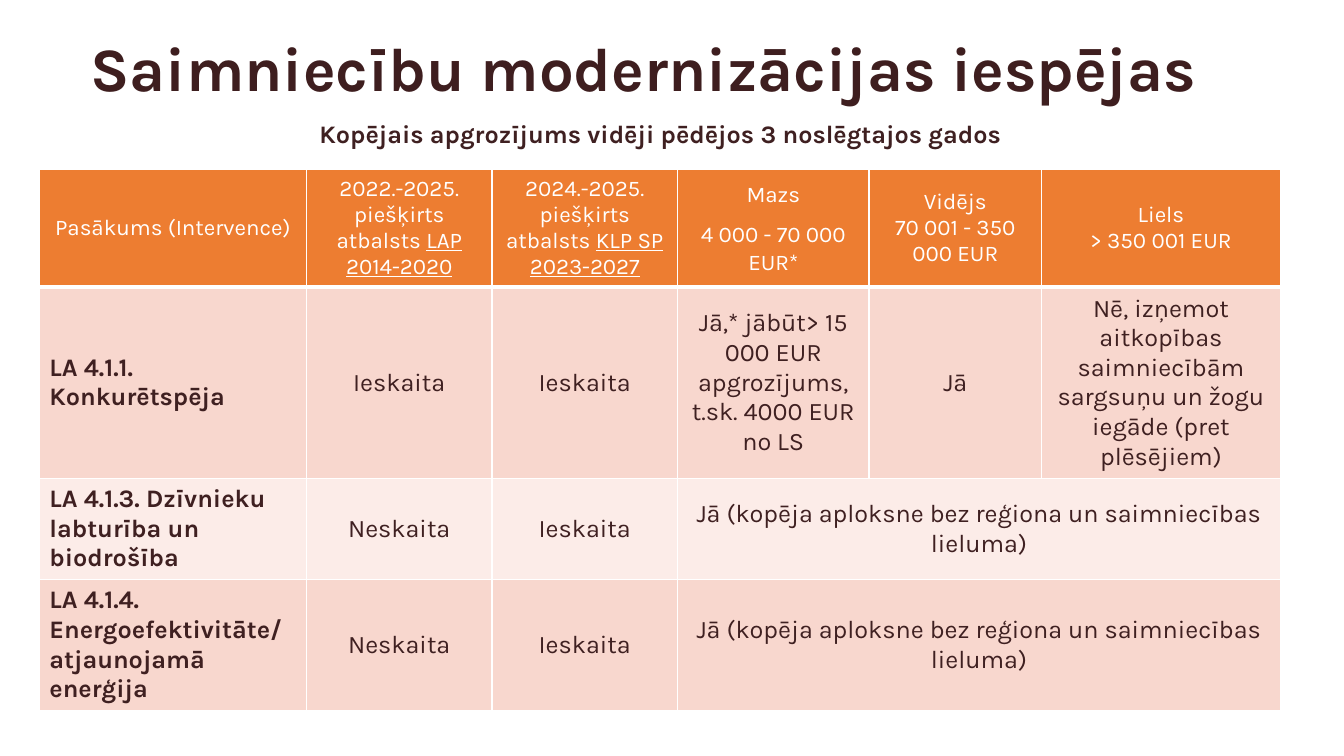
from lxml.etree import SubElement
from pptx import Presentation
from pptx.dml.color import RGBColor
from pptx.enum.text import MSO_ANCHOR, PP_ALIGN
from pptx.oxml.ns import qn
from pptx.util import Inches, Pt

FONT = "Karla"
TITLE_COLOR, TEXT_COLOR, WHITE = "3E1E1F", "3F2021", "FFFFFF"
HEADER_FILL, BAND_DARK, BAND_LIGHT = "ED7D31", "F8D7CE", "FCECE8"

COL_WIDTHS = [2.65, 1.84, 1.84, 1.9, 1.71, 2.37]
ROW_HEIGHTS = [1.14, 1.86, 0.98, 1.27]

# Each header cell is a list of paragraphs, each paragraph a list of runs;
# every second run is underlined
HEADERS = [
    [["Pasākums (Intervence)"]],
    [["2022.-2025. piešķirts atbalsts ", "LAP 2014-2020"]],
    [["2024.-2025. piešķirts atbalsts ", "KLP SP 2023-2027"]],
    [["Mazs"], ["4 000 - 70 000 EUR*"]],
    [["Vidējs"], ["70 001 - 350 000 EUR"]],
    [["Liels"], ["> 350 001 EUR"]],
]
SMALL_FARM_COL = 3
ANY_SIZE = "Jā (kopēja aploksne bez reģiona un saimniecības lieluma)"
BODY = [
    ["LA 4.1.1. Konkurētspēja", "Ieskaita", "Ieskaita",
     "Jā,* jābūt> 15 000 EUR apgrozījums, t.sk. 4000 EUR no LS", "Jā",
     "Nē, izņemot aitkopības saimniecībām sargsuņu un žogu iegāde "
     "(pret plēsējiem)"],
    ["LA 4.1.3. Dzīvnieku labturība un biodrošība", "Neskaita", "Ieskaita",
     ANY_SIZE],
    ["LA 4.1.4. Energoefektivitāte/ atjaunojamā enerģija", "Neskaita",
     "Ieskaita", ANY_SIZE],
]


def rgb(color):
    return RGBColor.from_string(color)


def write(tf, paragraphs, size=18, color=TEXT_COLOR, bold=False,
          align=PP_ALIGN.CENTER, line=None, after=None):
    tf.word_wrap = True
    for i, runs in enumerate(paragraphs):
        p = tf.paragraphs[0] if i == 0 else tf.add_paragraph()
        p.alignment = align
        if line:
            p.line_spacing = line
        if after:
            p.space_after = Pt(after)
        for j, text in enumerate(runs):
            r = p.add_run()
            r.text = text
            r.font.name = FONT
            r.font.size = Pt(size)
            r.font.bold = bold
            r.font.color.rgb = rgb(color)
            if j % 2:
                r.font.underline = True


def add_text(slide, text, left, top, width, height, anchor=MSO_ANCHOR.TOP,
             **fmt):
    box = slide.shapes.add_textbox(Inches(left), Inches(top),
                                   Inches(width), Inches(height))
    box.text_frame.vertical_anchor = anchor
    write(box.text_frame, [[text]], **fmt)


def style_cell(cell, fill, bottom=1):
    tc_pr = cell._tc.get_or_add_tcPr()
    for side, width in (("L", 1), ("R", 1), ("T", 1), ("B", bottom)):
        ln = SubElement(tc_pr, qn(f"a:ln{side}"), w=str(Pt(width)))
        SubElement(SubElement(ln, qn("a:solidFill")), qn("a:srgbClr"),
                   val=WHITE)
    cell.fill.solid()
    cell.fill.fore_color.rgb = rgb(fill)
    cell.vertical_anchor = MSO_ANCHOR.MIDDLE


def add_support_table(slide):
    table = slide.shapes.add_table(
        len(ROW_HEIGHTS), len(COL_WIDTHS), Inches(0.39), Inches(1.68),
        Inches(sum(COL_WIDTHS)), Inches(sum(ROW_HEIGHTS))).table
    for col, width in zip(table.columns, COL_WIDTHS):
        col.width = Inches(width)
    for row, height in zip(table.rows, ROW_HEIGHTS):
        row.height = Inches(height)

    # Header row
    for c, paragraphs in enumerate(HEADERS):
        cell = table.cell(0, c)
        style_cell(cell, HEADER_FILL, bottom=3)
        spacing = {}
        if c == SMALL_FARM_COL:
            cell.margin_left = cell.margin_right = Inches(0.07)
            cell.margin_top = cell.margin_bottom = 0
            spacing = {"line": 1.07, "after": 8}
        write(cell.text_frame, paragraphs, size=16, color=WHITE, **spacing)

    # Banded body rows; a short row spans its last text to the right edge
    last = len(COL_WIDTHS) - 1
    for n, texts in enumerate(BODY, start=1):
        for c in range(last + 1):
            style_cell(table.cell(n, c), BAND_DARK if n % 2 else BAND_LIGHT)
        if len(texts) <= last:
            table.cell(n, len(texts) - 1).merge(table.cell(n, last))
        for c, text in enumerate(texts):
            write(table.cell(n, c).text_frame, [[text]], bold=c == 0,
                  align=PP_ALIGN.CENTER if c else PP_ALIGN.LEFT)


def main():
    prs = Presentation()
    prs.slide_width, prs.slide_height = Inches(13.33), Inches(7.5)
    slide = prs.slides.add_slide(prs.slide_layouts[6])

    # Title, table and table heading
    add_text(slide, "Saimniecību modernizācijas iespējas", 0.8, 0.29, 11.5,
             0.84, anchor=MSO_ANCHOR.MIDDLE, size=44, color=TITLE_COLOR,
             bold=True, align=PP_ALIGN.LEFT, line=0.9)
    add_support_table(slide)
    add_text(slide, "Kopējais apgrozījums vidēji pēdējos 3 noslēgtajos gados",
             0.39, 1.12, 12.32, 0.4, bold=True)

    prs.save("out.pptx")


if __name__ == "__main__":
    main()
